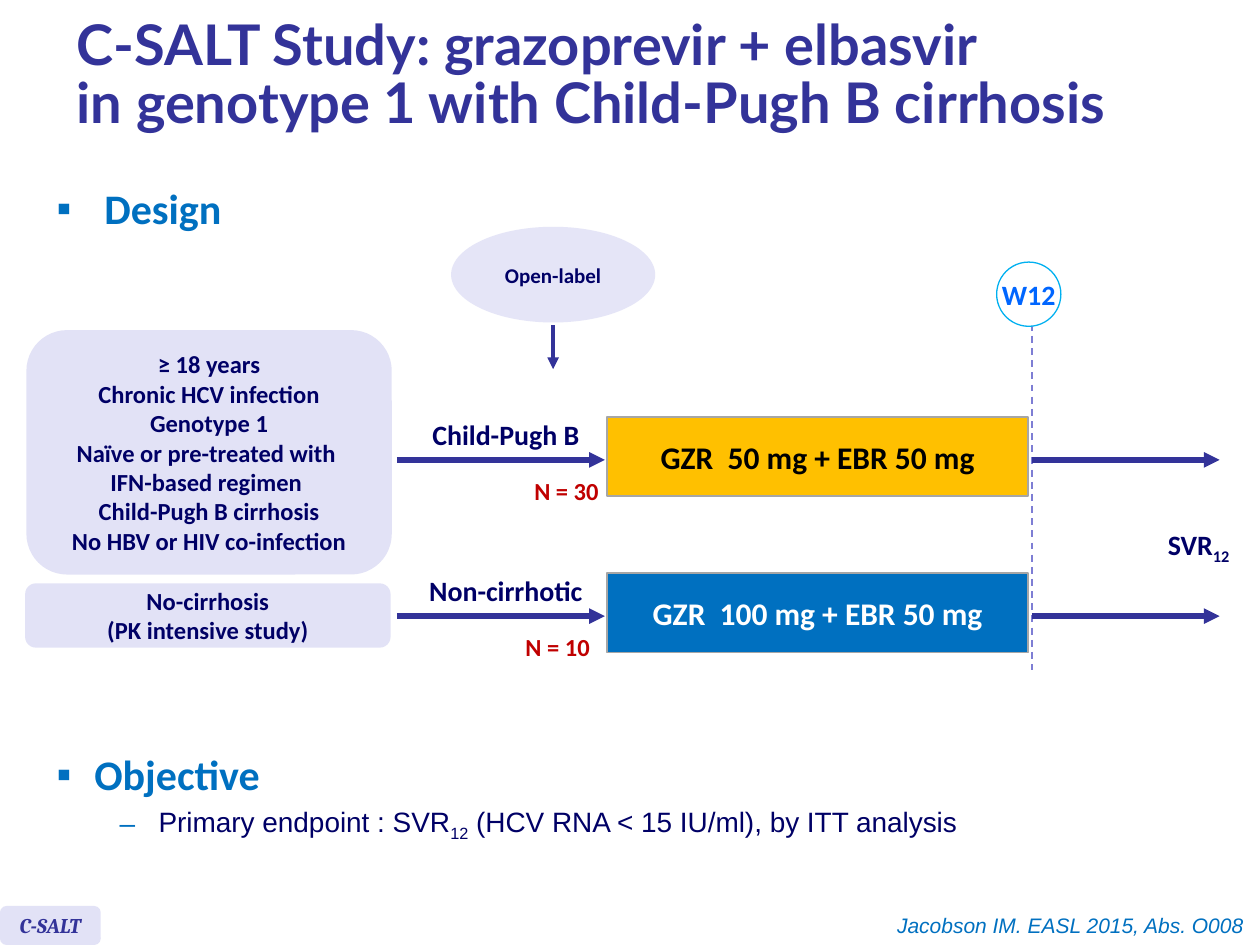
from lxml import etree
from pptx import Presentation
from pptx.dml.color import RGBColor
from pptx.enum.dml import MSO_LINE
from pptx.enum.shapes import MSO_CONNECTOR, MSO_SHAPE
from pptx.enum.text import MSO_ANCHOR, PP_ALIGN
from pptx.oxml.ns import qn
from pptx.util import Inches, Pt

INDIGO = RGBColor(0x33, 0x33, 0x99)
NAVY = RGBColor(0x00, 0x00, 0x66)
BLUE = RGBColor(0x00, 0x70, 0xC0)
BRIGHT_BLUE = RGBColor(0x00, 0x66, 0xFF)
CYAN = RGBColor(0x00, 0xB0, 0xF0)
LAVENDER = RGBColor(0xE2, 0xE2, 0xF6)
PALE_LAVENDER = RGBColor(0xE5, 0xE5, 0xF7)
VIOLET = RGBColor(0x7E, 0x7E, 0xD4)
AMBER = RGBColor(0xFF, 0xC0, 0x00)
GREY = RGBColor(0xA6, 0xA6, 0xA6)
RED = RGBColor(0xC0, 0x00, 0x00)
BLACK = RGBColor(0x00, 0x00, 0x00)
WHITE = RGBColor(0xFF, 0xFF, 0xFF)

LEFT, CENTER, RIGHT = PP_ALIGN.LEFT, PP_ALIGN.CENTER, PP_ALIGN.RIGHT
ROUND, RECT, OVAL = MSO_SHAPE.ROUNDED_RECTANGLE, MSO_SHAPE.RECTANGLE, MSO_SHAPE.OVAL

prs = Presentation()
prs.slide_width, prs.slide_height = Inches(10), Inches(7.5)
s = prs.slides.add_slide(prs.slide_layouts[6])


def add_box(at, lines, size, color, font="Calibri", bold=True, italic=False, align=CENTER,
            wrap=True, kind=None, fill=None, line=None):
    """Add a text box, or a preset shape when kind is given; "_" in a line toggles subscript."""
    at = [Inches(v) for v in at]
    if kind is None:
        sp = s.shapes.add_textbox(*at)
    else:
        sp = s.shapes.add_shape(kind, *at)
        sp.shadow.inherit = False
        if fill is None:
            sp.fill.background()
        else:
            sp.fill.solid()
            sp.fill.fore_color.rgb = fill
        if line is None:
            sp.line.fill.background()
        else:
            sp.line.color.rgb, sp.line.width = line[0], Pt(line[1])
    tf = sp.text_frame
    tf.word_wrap = wrap
    tf.vertical_anchor = MSO_ANCHOR.TOP if kind is None else MSO_ANCHOR.MIDDLE
    for i, text in enumerate(lines):
        p = tf.paragraphs[0] if i == 0 else tf.add_paragraph()
        p.alignment = align
        for j, part in enumerate(text.split("_")):
            r = p.add_run()
            r.text = part
            f = r.font
            f.name, f.size, f.bold, f.italic = font, Pt(size), bold, italic
            f.color.rgb = color
            if j % 2:
                r._r.get_or_add_rPr().set("baseline", "-25000")
    return sp


def add_line(x1, y1, x2, y2, color, width, arrow=True):
    ln = s.shapes.add_connector(MSO_CONNECTOR.STRAIGHT, *[Inches(v) for v in (x1, y1, x2, y2)])
    ln.line.color.rgb, ln.line.width = color, Pt(width)
    if arrow:
        etree.SubElement(ln.line._get_or_add_ln(), qn("a:tailEnd"), type="triangle")
    else:
        ln.line.dash_style = MSO_LINE.DASH
    etree.SubElement(ln._element.spPr, qn("a:effectLst"))


# Week 12 marker line, behind everything else
add_line(8.19, 2.57, 8.19, 5.32, VIOLET, 1, arrow=False)

# Title and reference
title = add_box((0.51, 0.08, 9.13, 1.07), ["C-SALT Study: grazoprevir + elbasvir"], 32, INDIGO,
                font="Lato", align=LEFT)
title.text_frame.vertical_anchor = MSO_ANCHOR.MIDDLE
p = title.text_frame.paragraphs[0]
p.line_spacing = 0.85
p.add_line_break()
r = p.add_run()
r.text = "in genotype 1 with Child-Pugh B cirrhosis"
r.font.name, r.font.size, r.font.bold = "Lato", Pt(32), True
r.font.color.rgb = INDIGO
add_box((6.95, 7.19, 3.02, 0.3), ["Jacobson IM. EASL 2015, Abs. O008"], 12, BLUE,
        font="Arial", bold=False, italic=True, align=RIGHT, wrap=False)

# Headings and endpoint
design = add_box((0.35, 1.4, 1.98, 0.63), ["Design"], 24, BLUE, align=LEFT)
objective = add_box((0.35, 5.89, 8.98, 0.85),
                    ["Objective", "Primary endpoint : SVR_12_ (HCV RNA < 15 IU/ml), by ITT analysis"],
                    24, BLUE, align=LEFT)
heading, endpoint = objective.text_frame.paragraphs
endpoint.level = 1
endpoint.space_before = Pt(3.2)
for r in endpoint.runs:
    r.font.name, r.font.size, r.font.bold = "Arial", Pt(16), False
    r.font.color.rgb = NAVY
for p, margin, hang, bullet in ((design.text_frame.paragraphs[0], 0.38, 0.38, "▪"),
                                (heading, 0.3, 0.3, "▪"), (endpoint, 0.81, 0.31, "–")):
    pPr = p._p.get_or_add_pPr()
    pPr.set("marL", str(Inches(margin)))
    pPr.set("indent", str(-Inches(hang)))
    bu_color = etree.SubElement(pPr, qn("a:buClr"))
    etree.SubElement(bu_color, qn("a:srgbClr"), val=str(BLUE))
    etree.SubElement(pPr, qn("a:buFont"), typeface="Arial")
    etree.SubElement(pPr, qn("a:buChar"), char=bullet)

# Treatment arms
arms = (
    (3.65, "Child-Pugh B", "N = 30", 4.13, "GZR  50 mg + EBR 50 mg", AMBER, BLACK),
    (4.89, "Non-cirrhotic", "N = 10", 4.06, "GZR  100 mg + EBR 50 mg", BLUE, WHITE),
)
for y, group, count, count_x, dose, fill, color in arms:
    add_box((3.19, y - 0.36, 1.65, 0.31), [group], 16, NAVY, wrap=False, kind=ROUND)
    add_box((4.82, y - 0.34, 3.34, 0.63), [dose], 18, color, kind=RECT, fill=fill, line=(GREY, 1))
    add_line(3.15, y, 4.8, y, INDIGO, 3)
    add_line(8.19, y, 9.68, y, INDIGO, 3)
    add_box((count_x, y + 0.08, 0.72, 0.34), [count], 14, RED, align=RIGHT, wrap=False)

# Time point, allocation and outcome
add_box((7.91, 2.08, 0.51, 0.51), ["W12"], 16, BRIGHT_BLUE, wrap=False, kind=OVAL,
        fill=WHITE, line=(CYAN, 0.75))
add_box((3.58, 1.8, 1.62, 0.76), ["Open-label"], 12, NAVY, wrap=False, kind=OVAL,
        fill=PALE_LAVENDER)
add_line(4.39, 2.58, 4.39, 2.93, INDIGO, 2.25)
add_box((9.17, 4.14, 0.72, 0.37), ["SVR_12"], 16, NAVY, align=LEFT, wrap=False)

# Populations and study tag
add_box((0.21, 2.62, 2.9, 1.94),
        ["≥ 18 years", "Chronic HCV infection", "Genotype 1", "Naïve or pre-treated with ",
         "IFN-based regimen ", "Child-Pugh B cirrhosis", "No HBV or HIV co-infection"],
        14, NAVY, kind=ROUND, fill=LAVENDER)
add_box((0.2, 4.63, 2.9, 0.51), ["No-cirrhosis", "(PK intensive study)"], 14, NAVY,
        kind=ROUND, fill=LAVENDER)
add_box((0, 7.19, 0.8, 0.31), ["C-SALT"], 12, INDIGO, font="Cambria", italic=True, wrap=False,
        kind=ROUND, fill=LAVENDER)

prs.save("out.pptx")
